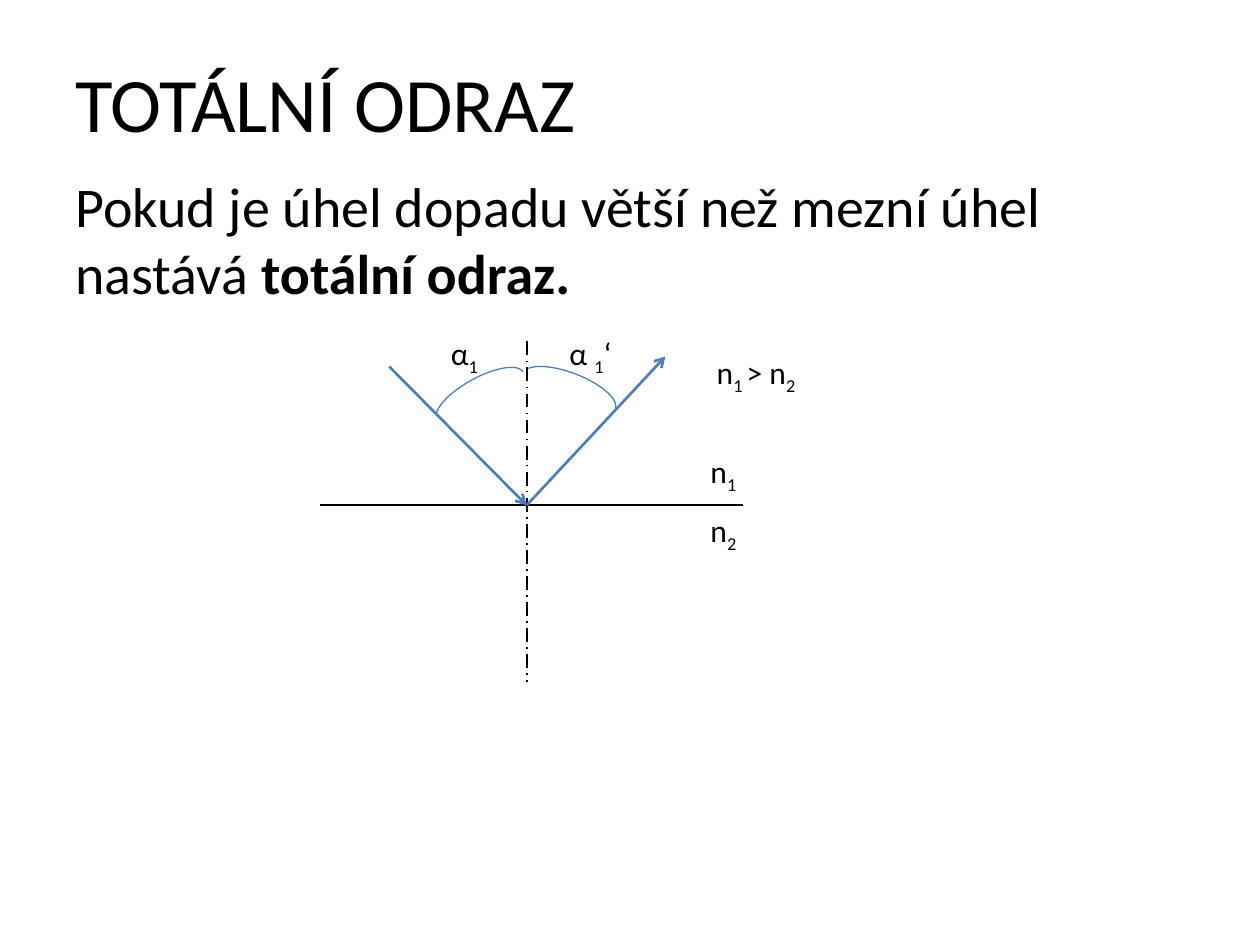
from lxml import etree
from pptx import Presentation
from pptx.dml.color import RGBColor
from pptx.enum.dml import MSO_LINE
from pptx.enum.shapes import MSO_CONNECTOR, MSO_SHAPE
from pptx.enum.text import MSO_ANCHOR
from pptx.oxml.ns import qn
from pptx.util import Inches, Pt

BLACK = RGBColor(0x00, 0x00, 0x00)
BLUE = RGBColor(0x4B, 0x7E, 0xBC)
STRAIGHT = MSO_CONNECTOR.STRAIGHT
ARC = MSO_SHAPE.ARC
TOP, MIDDLE = MSO_ANCHOR.TOP, MSO_ANCHOR.MIDDLE
DASH_DOT = MSO_LINE.LONG_DASH_DOT
BOLD, SUB = "bold", "sub"


class SlideBuilder:
    font_name = "Calibri"

    def __init__(self, slide):
        self.slide = slide

    def text(self, box, runs, size=18, anchor=TOP):
        """Add a text box; runs are (text, style) pairs."""
        shape = self.slide.shapes.add_textbox(*map(Inches, box))
        frame = shape.text_frame
        frame.word_wrap = True
        frame.vertical_anchor = anchor
        for content, style in runs:
            run = frame.paragraphs[0].add_run()
            run.text = content
            run.font.name = self.font_name
            run.font.size = Pt(size)
            run.font.color.rgb = BLACK
            if style == BOLD:
                run.font.bold = True
            elif style == SUB:
                run.font._element.set("baseline", "-25000")

    def line(self, start, end, color=BLACK, width=1, dash=None, arrow=False):
        connector = self.slide.shapes.add_connector(
            STRAIGHT, *map(Inches, (*start, *end)))
        connector.line.color.rgb = color
        connector.line.width = Pt(width)
        if dash:
            connector.line.dash_style = dash
        if arrow:
            tail = etree.SubElement(connector.line._get_or_add_ln(), qn("a:tailEnd"))
            tail.set("type", "arrow")
        etree.SubElement(connector._element.spPr, qn("a:effectLst"))

    def arc(self, box, rotation):
        shape = self.slide.shapes.add_shape(ARC, *map(Inches, box))
        shape.shadow.inherit = False
        shape.adjustments[0] = 112.355
        shape.adjustments[1] = 0
        shape.rotation = rotation
        shape.fill.background()
        shape.line.color.rgb = BLUE
        shape.line.width = Pt(0.75)


def main():
    prs = Presentation()
    prs.slide_width, prs.slide_height = Inches(10), Inches(7.5)
    builder = SlideBuilder(prs.slides.add_slide(prs.slide_layouts[6]))

    # Heading and statement
    builder.text((0.5, 0.3, 9, 1.01), [("TOTÁLNÍ ODRAZ", None)], 44, MIDDLE)
    builder.text((0.5, 1.31, 9, 5.39), [
        ("Pokud je úhel dopadu větší než mezní úhel nastává ", None),
        ("totální odraz.", BOLD)], 32)

    # Boundary between the media and its normal
    incidence = (4.18, 4.01)
    builder.line((2.54, 4.01), (5.9, 4.01))
    builder.line((4.18, 2.71), (4.18, 5.41), dash=DASH_DOT)

    # Incident and reflected rays
    builder.line((3.09, 2.91), incidence, BLUE, 1.5, arrow=True)
    builder.line(incidence, (5.28, 2.83), BLUE, 1.5, arrow=True)

    # Angles of incidence and reflection
    builder.arc((3.42, 3, 0.78, 0.28), 331.2)
    builder.arc((4.13, 2.96, 0.78, 0.28), 21.1)
    builder.text((3.48, 2.6, 0.64, 0.4), [("α", None), ("1", SUB)])
    builder.text((4.42, 2.6, 0.64, 0.4), [("α ", None), ("1", SUB), ("‘", None)])

    # Refractive indices
    for index, top in (("1", 3.54), ("2", 4.01)):
        builder.text((5.54, top, 0.55, 0.48), [("n", None), (index, SUB)])
    builder.text((5.59, 2.75, 1.64, 0.48), [
        ("n", None), ("1 ", SUB), ("> n", None), ("2", SUB)])

    prs.save("out.pptx")


if __name__ == "__main__":
    main()
